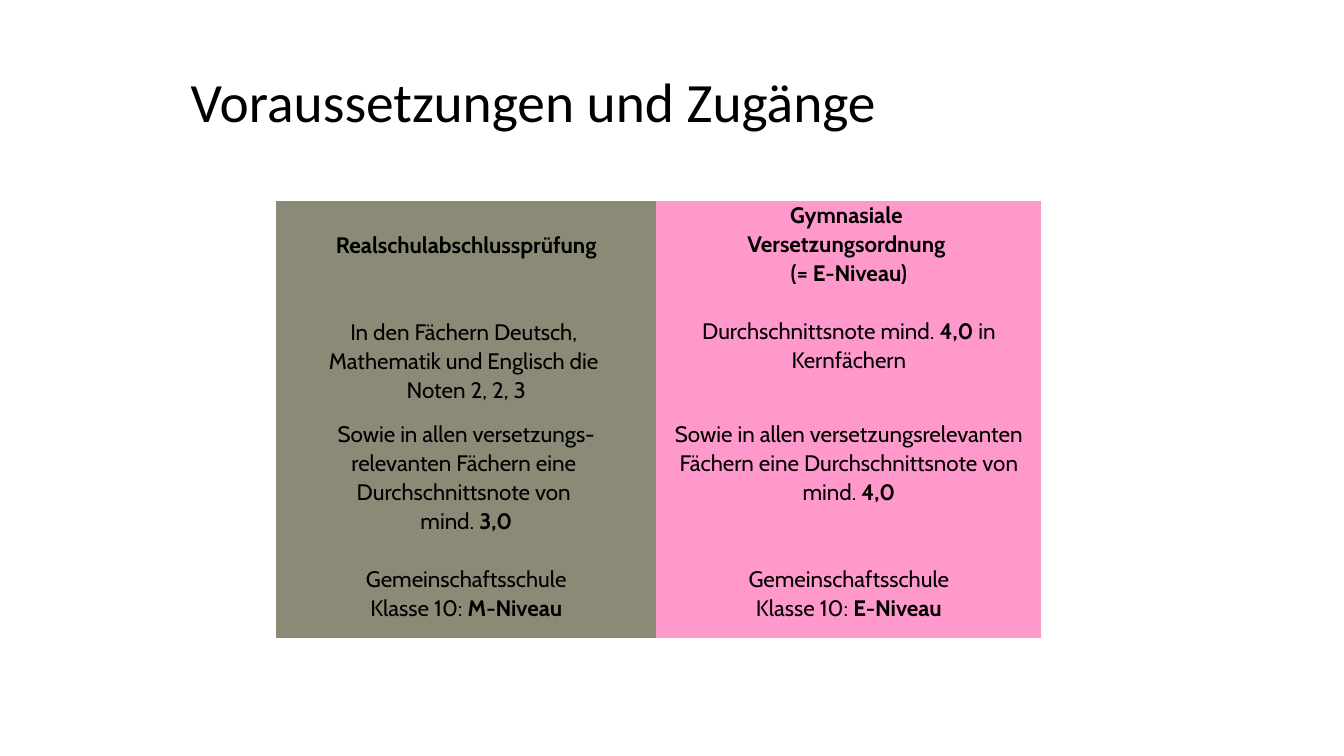
import dataclasses

import pptx
import pptx.dml.color
import pptx.enum.text
import pptx.util

Inches, Pt = pptx.util.Inches, pptx.util.Pt
PP_ALIGN = pptx.enum.text.PP_ALIGN

COLORS = {"text": "000000", "m_level": "8A8A76", "e_level": "FF99CC"}
NO_STYLE_NO_GRID = "{2D5ABB26-0587-4C30-8999-92F81FD0307C}"
LINE = 20.8  # height of one text line in points


@dataclasses.dataclass
class Para:
    text: str
    lines_before: int = 0


@dataclasses.dataclass
class Route:
    color: str
    width: float
    cells: list[list[Para]]


ROUTES = [
    Route("m_level", 3.77, [
        [Para("*Realschulabschlussprüfung*", 1),
         Para("In den Fächern Deutsch, \nMathematik und Englisch die ", 2),
         Para("Noten 2, 2, 3")],
        [Para("Sowie in allen versetzungs-\nrelevanten Fächern eine "),
         Para("Durchschnittsnote von "),
         Para("mind. *3,0*"),
         Para("Gemeinschaftsschule\nKlasse 10: *M-Niveau*", 1)],
    ]),
    Route("e_level", 3.82, [
        [Para("*Gymnasiale \nVersetzungsordnung \n(= E-Niveau)*"),
         Para("Durchschnittsnote mind. *4,0 *in Kernfächern", 1)],
        [Para("Sowie in allen versetzungsrelevanten Fächern eine "
              "Durchschnittsnote von mind. *4,0*"),
         Para("Gemeinschaftsschule\nKlasse 10: *E-Niveau*", 2)],
    ]),
]
ROW_HEIGHTS = [0.66, 2.17, 2.17]


def rgb(name: str) -> pptx.dml.color.RGBColor:
    return pptx.dml.color.RGBColor.from_string(COLORS[name])


def write(p, text: str, *, font: str, size: float, spacing: float,
          align: PP_ALIGN = PP_ALIGN.LEFT, before: float = 0) -> None:
    """Fill a paragraph; asterisks enclose bold text, newlines break lines."""
    p.alignment, p.line_spacing = align, spacing
    p.space_before, p.space_after = Pt(before), Pt(0)
    for i, part in enumerate(text.split("*")):
        for j, line in enumerate(part.split("\n")):
            if j:
                p.add_line_break()
            if line:
                r = p.add_run()
                r.text = line
                r.font.name, r.font.size = font, Pt(size)
                r.font.bold = i % 2 == 1
                r.font.color.rgb = rgb("text")


def add_title(slide, text: str) -> None:
    sp = slide.shapes.title
    sp.left, sp.top = Inches(1.79), Inches(0.85)
    sp.width, sp.height = Inches(10.62), Inches(0.99)
    tf = sp.text_frame
    tf.auto_size = pptx.enum.text.MSO_AUTO_SIZE.NONE
    tf.vertical_anchor = pptx.enum.text.MSO_ANCHOR.MIDDLE
    tf.margin_bottom = Inches(0.66)
    write(tf.paragraphs[0], text, font="Calibri", size=39.6, spacing=0.9)


def fill_cell(cell, paras: list[Para], color: str) -> None:
    cell.fill.solid()
    cell.fill.fore_color.rgb = rgb(color)
    cell.margin_left = cell.margin_right = cell.margin_bottom = 0
    cell.margin_top = Pt(LINE * paras[0].lines_before)
    tf = cell.text_frame
    for i, para in enumerate(paras):
        p = tf.add_paragraph() if i else tf.paragraphs[0]
        write(p, para.text, font="Cabin", size=16, spacing=1.07,
              align=PP_ALIGN.CENTER, before=LINE * para.lines_before if i else 0)


def add_routes(slide, routes: list[Route]) -> None:
    frame = slide.shapes.add_table(
        len(ROW_HEIGHTS), len(routes), Inches(2.74), Inches(1.33),
        Inches(sum(route.width for route in routes)), Inches(sum(ROW_HEIGHTS)))
    table = frame.table
    table.first_row = table.horz_banding = False
    table._tbl.tblPr[0].text = NO_STYLE_NO_GRID
    for row, height in zip(table.rows, ROW_HEIGHTS):
        row.height = Inches(height)
    for col, route in enumerate(routes):
        table.columns[col].width = Inches(route.width)
        table.cell(0, col).fill.background()
        for row, paras in enumerate(route.cells, start=1):
            fill_cell(table.cell(row, col), paras, route.color)


def main() -> None:
    prs = pptx.Presentation()
    prs.slide_width, prs.slide_height = Inches(13.33), Inches(7.5)
    slide = prs.slides.add_slide(prs.slide_layouts[5])
    add_title(slide, "Voraussetzungen und Zugänge")
    add_routes(slide, ROUTES)
    prs.save("out.pptx")


if __name__ == "__main__":
    main()
